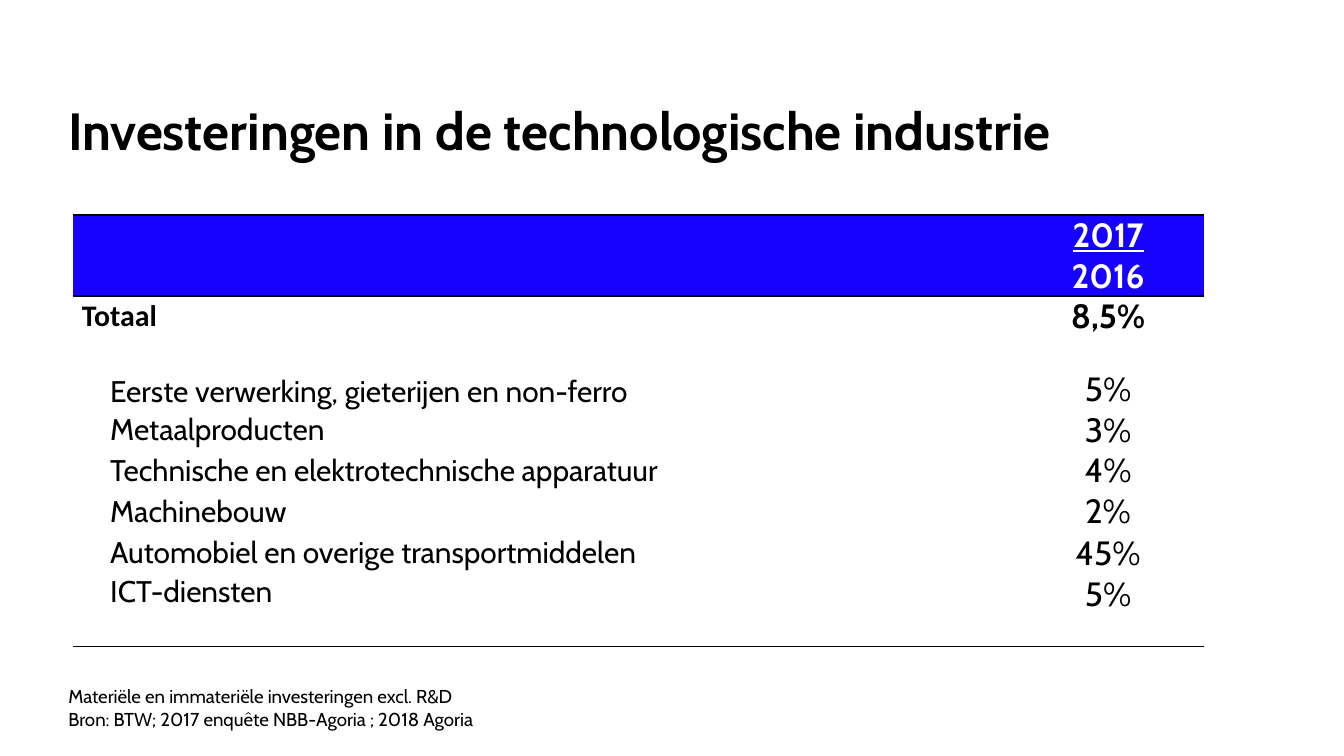
import pptx
import pptx.util
import pptx.dml.color
import pptx.enum.text
import pptx.oxml.ns
from lxml import etree

Inches, Pt = pptx.util.Inches, pptx.util.Pt
ANCHOR = pptx.enum.text.MSO_ANCHOR
CENTER = pptx.enum.text.PP_ALIGN.CENTER
COLORS = {"black": "000000", "white": "FFFFFF", "blue": "1600FF"}
FONT = "Cabin"

# Content
TITLE = "Investeringen in de technologische industrie"
YEARS = ["2017", "2016"]
TOTAL = ("Totaal", "8,5%")
SECTORS = [
    ("Eerste verwerking, gieterijen en non-ferro", "5%"),
    ("Metaalproducten", "3%"),
    ("Technische en elektrotechnische apparatuur", "4%"),
    ("Machinebouw", "2%"),
    ("Automobiel en overige transportmiddelen", "45%"),
    ("ICT-diensten", "5%"),
]
NOTES = [
    "Materiële en immateriële investeringen excl. R&D",
    "Bron: BTW; 2017 enquête NBB-Agoria ; 2018 Agoria",
]
COL_WIDTHS = [5.11, 1.84, 1.47]
ROW_HEIGHTS = [0.6, 0.3, 0.55, 0.3, 0.3, 0.31, 0.31, 0.54]


def add_run(p, text, size, color="black", bold=False, font=FONT):
    r = p.add_run()
    r.text = text
    r.font.name, r.font.size, r.font.bold = font, Pt(size), bold
    r.font.color.rgb = pptx.dml.color.RGBColor.from_string(COLORS[color])
    return r


def add_lines(tf, lines, size, **style):
    runs = []
    for i, line in enumerate(lines):
        p = tf.paragraphs[0] if i == 0 else tf.add_paragraph()
        runs.append(add_run(p, line, size, **style))
    return runs


def add_text(s, box, lines, size, anchor, **style):
    tf = s.shapes.add_textbox(*map(Inches, box)).text_frame
    tf.word_wrap = True
    tf.vertical_anchor = anchor
    add_lines(tf, lines, size, **style)


def set_borders(cell, ruled):
    tc_pr = cell._tc.get_or_add_tcPr()
    for side in "LRTB":
        ln = etree.SubElement(tc_pr, pptx.oxml.ns.qn(f"a:ln{side}"), w=str(Pt(1)))
        if side in ruled:
            fill = etree.SubElement(ln, pptx.oxml.ns.qn("a:solidFill"))
            etree.SubElement(fill, pptx.oxml.ns.qn("a:srgbClr"), val=COLORS["black"])
        else:
            etree.SubElement(ln, pptx.oxml.ns.qn("a:noFill"))


def format_cell(cell, row, last):
    set_borders(cell, "TB" if row == 0 else "T" if row == 1 else "B" if row == last else "")
    if row == 0:
        cell.fill.solid()
        cell.fill.fore_color.rgb = pptx.dml.color.RGBColor.from_string(COLORS["blue"])
    else:
        cell.fill.background()
    cell.margin_left = Inches(0.04)
    cell.margin_right = cell.margin_top = cell.margin_bottom = 0
    cell.vertical_anchor = ANCHOR.MIDDLE


# Widescreen slide, 16:9
prs = pptx.Presentation()
prs.slide_width = Inches(10)
prs.slide_height = prs.slide_width * 9 // 16
s = prs.slides.add_slide(prs.slide_layouts[6])

# Title
add_text(s, (0.41, 0.64, 9.21, 0.65), [TITLE], 28, ANCHOR.MIDDLE, bold=True)

# Table grid
last = len(ROW_HEIGHTS) - 1
table = s.shapes.add_table(
    len(ROW_HEIGHTS), len(COL_WIDTHS), Inches(0.54), Inches(1.6),
    Inches(sum(COL_WIDTHS)), Inches(sum(ROW_HEIGHTS))).table
table.first_row = table.horz_banding = False
for col, width in zip(table.columns, COL_WIDTHS):
    col.width = Inches(width)
for i, (row, height) in enumerate(zip(table.rows, ROW_HEIGHTS)):
    row.height = Inches(height)
    for cell in row.cells:
        format_cell(cell, i, last)

# Header: one year over the other
tf = table.cell(0, 2).text_frame
years = add_lines(tf, YEARS, 18, color="white", bold=True)
years[0].font.underline = True
for p in tf.paragraphs:
    p.alignment = CENTER

# Total and sectors
for i, (label, value) in enumerate([TOTAL] + SECTORS, start=1):
    is_total = i == 1
    name, share = table.cell(i, 0), table.cell(i, 2)
    name.margin_left = Inches(0.07 if is_total else 0.28)
    add_run(name.text_frame.paragraphs[0], label, 16, bold=is_total,
            font="Calibri" if is_total else FONT)
    p = share.text_frame.paragraphs[0]
    p.alignment = CENTER
    add_run(p, value, 18, bold=is_total)
for col in (0, 2):
    table.cell(2, col).vertical_anchor = ANCHOR.BOTTOM
    table.cell(last, col).vertical_anchor = ANCHOR.TOP

# Source notes
add_text(s, (0.41, 5.05, 3.79, 0.44), NOTES, 10, ANCHOR.TOP)

prs.save("out.pptx")
